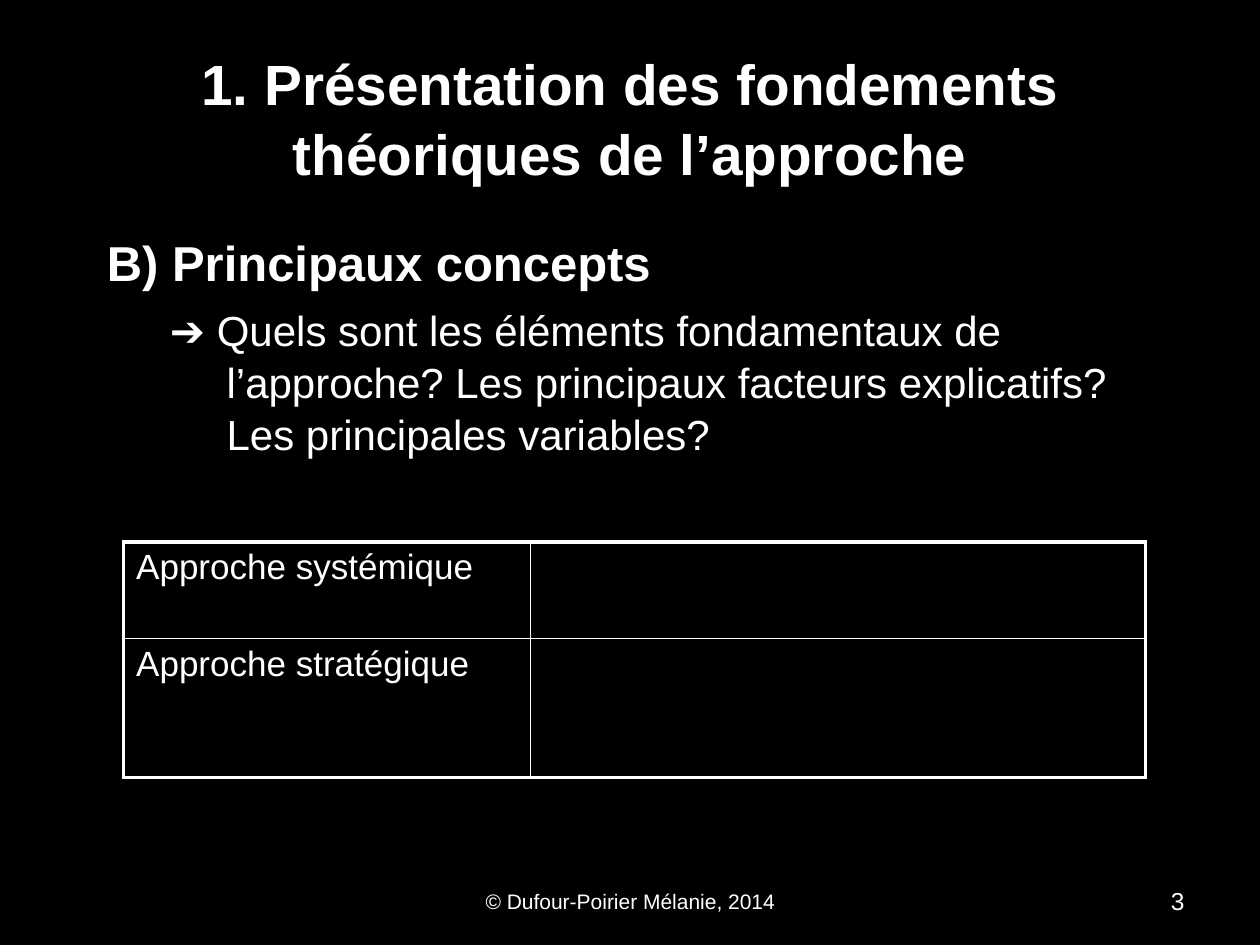
from dataclasses import dataclass, field
from typing import Any

from lxml import etree
from pptx import Presentation
from pptx import util as u
from pptx.dml.color import RGBColor
from pptx.enum import text
from pptx.oxml import ns

WHITE, BLACK = "FFFFFF", "000000"
THICK, THIN = 2.25, 1
CENTER, RIGHT = text.PP_ALIGN.CENTER, text.PP_ALIGN.RIGHT
TOP, MIDDLE = text.MSO_ANCHOR.TOP, text.MSO_ANCHOR.MIDDLE


@dataclass
class Line:
    wording: str
    size: float
    bold: bool = False
    format: dict[str, Any] = field(default_factory=dict)
    margin: float = 0
    indent: float = 0


@dataclass
class Block:
    left: float
    top: float
    width: float
    height: float
    anchor: text.MSO_ANCHOR
    lines: list[Line]


BLOCKS = [
    Block(36, 21.6, 648, 90, MIDDLE, [
        Line("1. Présentation des fondements théoriques de l’approche", 32.4, True,
             {"alignment": CENTER, "line_spacing": 1.04}),
    ]),
    Block(54, 128.2, 622, 324, TOP, [
        Line("B) Principaux concepts", 28, True,
             {"space_before": u.Pt(2), "line_spacing": 1.04}, 48, -48),
        Line("➔ Quels sont les éléments fondamentaux de l’approche? "
             "Les principaux facteurs explicatifs? Les principales variables?", 24, False,
             {"space_before": u.Pt(6), "line_spacing": 1.04}, 68.4, -32.4),
    ]),
    Block(516.2, 500.4, 167.8, 28.8, MIDDLE, [Line("3", 14, format={"alignment": RIGHT})]),
    Block(246.2, 500.4, 228.2, 28.8, MIDDLE,
          [Line("© Dufour-Poirier Mélanie, 2014", 12, format={"alignment": CENTER})]),
]
COLUMN_WIDTHS = [232.6, 351.4]
ROW_HEIGHTS = [55.4, 79.2]
APPROACHES = ["Approche systémique", "Approche stratégique"]


def paint(target: Any, color: str) -> None:
    target.solid()
    target.fore_color.rgb = RGBColor.from_string(color)


def write_line(para: Any, line: Line) -> None:
    for name, value in line.format.items():
        setattr(para, name, value)
    if line.margin:
        properties = para._p.get_or_add_pPr()
        properties.set("marL", str(u.Pt(line.margin)))
        properties.set("indent", str(u.Pt(line.indent)))
    span = para.add_run()
    span.text = line.wording
    font_format = {"name": "Arial", "size": u.Pt(line.size), "bold": line.bold}
    for name, value in font_format.items():
        setattr(span.font, name, value)
    paint(span.font.fill, WHITE)


def draw_block(page: Any, block: Block) -> None:
    places = (block.left, block.top, block.width, block.height)
    frame = page.shapes.add_textbox(*map(u.Pt, places)).text_frame
    frame.word_wrap = True
    frame.vertical_anchor = block.anchor
    for number, line in enumerate(block.lines):
        para = frame.add_paragraph() if number else frame.paragraphs[0]
        write_line(para, line)


def draw_borders(cell: Any, widths: dict[str, float]) -> None:
    properties = cell._tc.get_or_add_tcPr()
    for position, (side, width) in enumerate(widths.items()):
        border = etree.Element(ns.qn(f"a:{side}"), w=str(u.Pt(width)))
        fill = etree.SubElement(border, ns.qn("a:solidFill"))
        etree.SubElement(fill, ns.qn("a:srgbClr"), val=WHITE)
        properties.insert(position, border)


def draw_table(page: Any) -> None:
    table = page.shapes.add_table(
        len(ROW_HEIGHTS), len(COLUMN_WIDTHS), u.Pt(70.6), u.Pt(309.6),
        u.Pt(sum(COLUMN_WIDTHS)), u.Pt(sum(ROW_HEIGHTS))).table
    table.first_row = table.horz_banding = False
    for column, width in zip(table.columns, COLUMN_WIDTHS):
        column.width = u.Pt(width)
    last_row, last_column = len(ROW_HEIGHTS) - 1, len(COLUMN_WIDTHS) - 1
    for row, height in enumerate(ROW_HEIGHTS):
        table.rows[row].height = u.Pt(height)
        write_line(table.cell(row, 0).text_frame.paragraphs[0], Line(APPROACHES[row], 20))
        for column in range(len(COLUMN_WIDTHS)):
            cell = table.cell(row, column)
            paint(cell.fill, BLACK)
            outer = {"lnL": column == 0, "lnR": column == last_column,
                     "lnT": row == 0, "lnB": row == last_row}
            draw_borders(cell, {side: THICK if edge else THIN for side, edge in outer.items()})


def main() -> None:
    deck = Presentation()
    deck.slide_width, deck.slide_height = u.Pt(720), u.Pt(540)
    page = deck.slides.add_slide(deck.slide_layouts[6])
    paint(page.background.fill, BLACK)
    for block in BLOCKS:
        draw_block(page, block)
    draw_table(page)
    deck.save("out.pptx")


if __name__ == "__main__":
    main()
